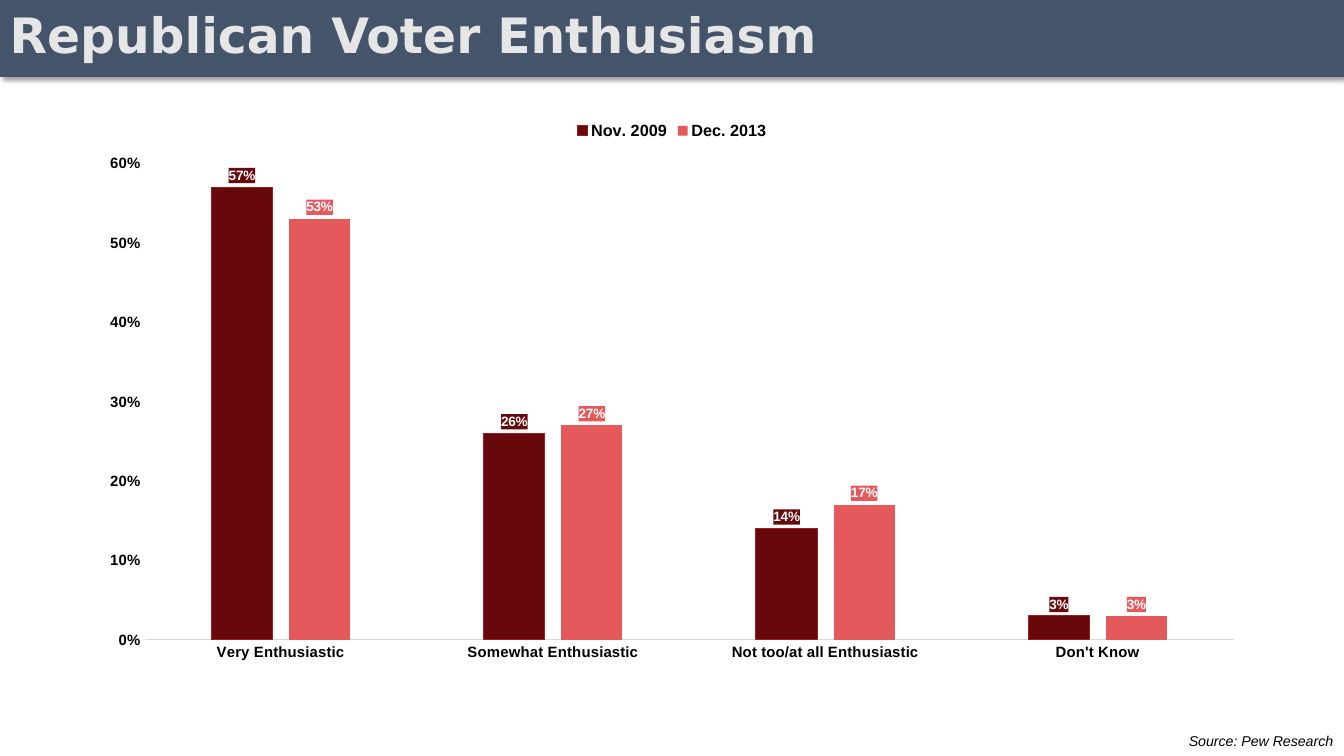
import pptx
import pptx.chart.data
import pptx.dml.color
import pptx.enum.chart
import pptx.enum.shapes
import pptx.enum.text
import pptx.oxml
import pptx.oxml.ns
import pptx.util

Inches = pptx.util.Inches
Pt = pptx.util.Pt
ALIGN = pptx.enum.text.PP_ALIGN
ANCHOR = pptx.enum.text.MSO_ANCHOR
CHART = pptx.enum.chart
NAMESPACES = pptx.oxml.ns.nsdecls

COLORS = {
    "banner": "44546A",
    "title": "E7E6E6",
    "text": "000000",
    "label": "FFFFFF",
    "axis": "D9D9D9",
    "dark_red": "67090B",
    "dark_red_edge": "9F1B1E",
    "light_red": "E3595C",
}
SLIDE_WIDTH, SLIDE_HEIGHT, BANNER_HEIGHT = 13.78, 7.75, 0.78

CATEGORIES = ["Very Enthusiastic", "Somewhat Enthusiastic",
              "Not too/at all Enthusiastic", "Don't Know"]
# Name, values, fill colour, edge colour
SERIES = [
    ("Nov. 2009", (0.57, 0.26, 0.14, 0.03), "dark_red", "dark_red_edge"),
    ("Dec. 2013", (0.53, 0.27, 0.17, 0.03), "light_red", None),
]


def set_values(target, values):
    for name, value in values.items():
        setattr(target, name, value)


class SlideBuilder:
    def __init__(self, slide, font_name="Arial"):
        self.slide = slide
        self.font_name = font_name

    def color(self, name):
        return pptx.dml.color.RGBColor.from_string(COLORS[name])

    def style_font(self, font, size, color="text", **values):
        set_values(font, {"name": self.font_name, "size": Pt(size), **values})
        font.color.rgb = self.color(color)

    def style_line(self, line, color, width):
        line.color.rgb = self.color(color)
        line.width = Pt(width)

    def banner(self, left, top, width, height):
        shape = self.slide.shapes.add_shape(
            pptx.enum.shapes.MSO_SHAPE.RECTANGLE,
            Inches(left), Inches(top), Inches(width), Inches(height))
        shape.fill.solid()
        shape.fill.fore_color.rgb = self.color("banner")
        self.style_line(shape.line, "banner", 1)
        # Soft shadow toward the lower right
        shape.shadow.inherit = False
        effects = shape.element.spPr.find(pptx.oxml.ns.qn("a:effectLst"))
        effects.append(pptx.oxml.parse_xml(
            f'<a:outerShdw {NAMESPACES("a")} blurRad="{Pt(4)}" dist="{Pt(3)}" '
            'dir="2700000" algn="tl" rotWithShape="0"><a:srgbClr val="000000">'
            '<a:alpha val="40000"/></a:srgbClr></a:outerShdw>'))

    def text(self, text, box, size, color="text", anchor=ANCHOR.TOP,
             paragraph_values=None, **font_values):
        shape = self.slide.shapes.add_textbox(*map(Inches, box))
        set_values(shape.text_frame, {"word_wrap": True, "vertical_anchor": anchor})
        paragraph = shape.text_frame.paragraphs[0]
        set_values(paragraph, paragraph_values or {})
        run = paragraph.add_run()
        run.text = text
        self.style_font(run.font, size, color, **font_values)

    def column_chart(self, box, categories, series_rows):
        data = pptx.chart.data.CategoryChartData(number_format="0%")
        data.categories = categories
        for name, values, *_ in series_rows:
            data.add_series(name, values)
        chart = self.slide.shapes.add_chart(
            CHART.XL_CHART_TYPE.COLUMN_CLUSTERED, *map(Inches, box), data).chart
        set_values(chart, {"has_title": False, "has_legend": True})
        self.style_font(chart.font, 10)
        set_values(chart.legend, {"position": CHART.XL_LEGEND_POSITION.TOP,
                                  "include_in_layout": False})
        self.style_font(chart.legend.font, 12, bold=True)
        plot = chart.plots[0]
        set_values(plot, {"gap_width": 219, "overlap": -27, "vary_by_categories": False})

        # Axes
        for axis in (chart.category_axis, chart.value_axis):
            set_values(axis, {"major_tick_mark": CHART.XL_TICK_MARK.NONE,
                              "minor_tick_mark": CHART.XL_TICK_MARK.NONE,
                              "has_major_gridlines": False})
            self.style_font(axis.tick_labels.font, 11, bold=True)
        self.style_line(chart.category_axis.format.line, "axis", 0.75)
        set_values(chart.value_axis, {"minimum_scale": 0, "maximum_scale": 0.6,
                                      "major_unit": 0.1})
        chart.value_axis.format.line.fill.background()
        set_values(chart.value_axis.tick_labels,
                   {"number_format": "0%", "number_format_is_linked": False})

        # Columns and their labels
        for series, (_, _, fill, edge) in zip(plot.series, series_rows):
            series.format.fill.solid()
            series.format.fill.fore_color.rgb = self.color(fill)
            if edge:
                self.style_line(series.format.line, edge, 0.75)
            else:
                series.format.line.fill.background()
            self.column_labels(series.data_labels, fill)

    def column_labels(self, labels, fill):
        set_values(labels, {"show_value": True, "number_format": "0%",
                            "number_format_is_linked": False,
                            "position": CHART.XL_LABEL_POSITION.OUTSIDE_END})
        self.style_font(labels.font, 10, "label", bold=True)
        text_properties = labels._element.find(pptx.oxml.ns.qn("c:txPr"))
        text_properties.addprevious(pptx.oxml.parse_xml(
            f'<c:spPr {NAMESPACES("c", "a")}><a:solidFill>'
            f'<a:srgbClr val="{COLORS[fill]}"/></a:solidFill></c:spPr>'))


def main():
    presentation = pptx.Presentation()
    set_values(presentation, {"slide_width": Inches(SLIDE_WIDTH),
                              "slide_height": Inches(SLIDE_HEIGHT)})
    builder = SlideBuilder(presentation.slides.add_slide(presentation.slide_layouts[6]))

    # Title banner
    banner_box = (0, 0, SLIDE_WIDTH, BANNER_HEIGHT)
    builder.banner(*banner_box)
    builder.text("Republican Voter Enthusiasm", banner_box, 36, "title", ANCHOR.MIDDLE,
                 {"line_spacing": 0.9}, name="DejaVu Sans", bold=True)

    # Source line
    builder.text("Source: Pew Research", (11.25, 7.46, 2.52, 0.29), 10.5,
                 paragraph_values={"alignment": ALIGN.RIGHT}, italic=True)

    # Enthusiasm chart
    builder.column_chart((0.89, 1.14, 12, 5.75), CATEGORIES, SERIES)

    presentation.save("out.pptx")


if __name__ == "__main__":
    main()
